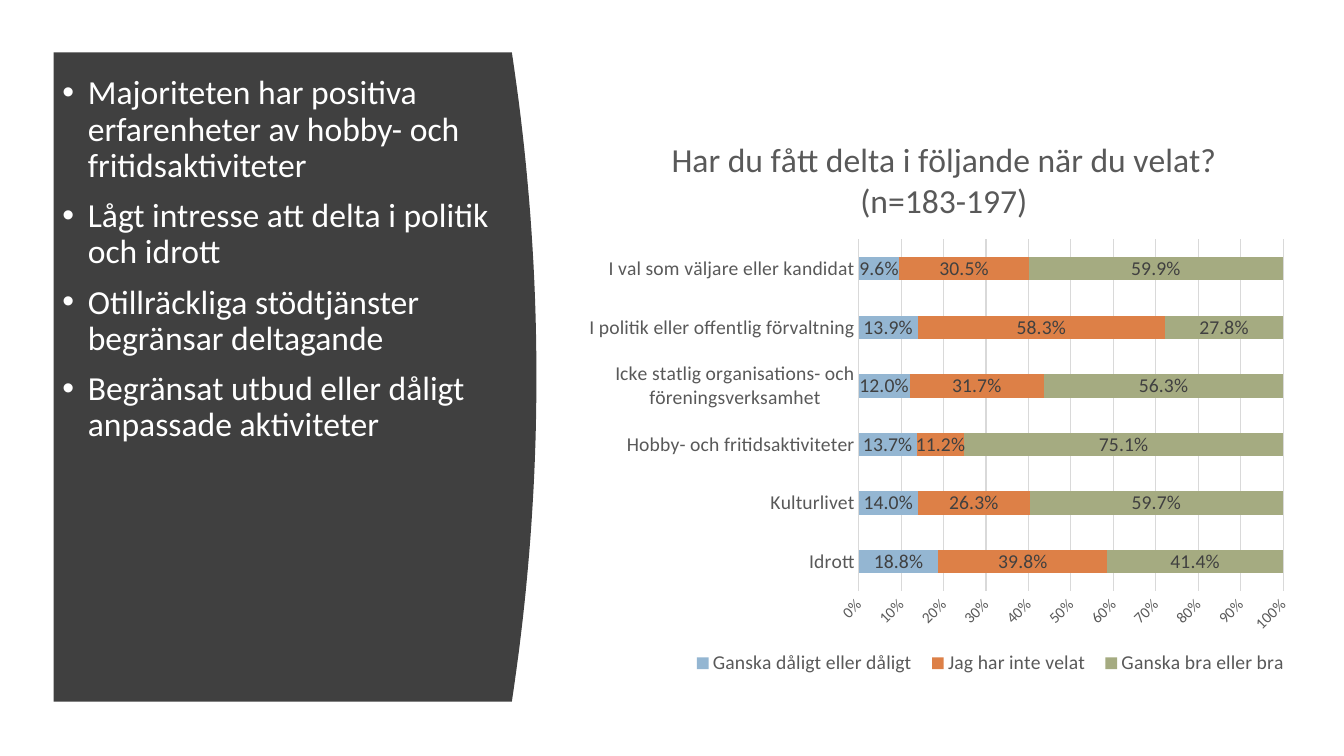
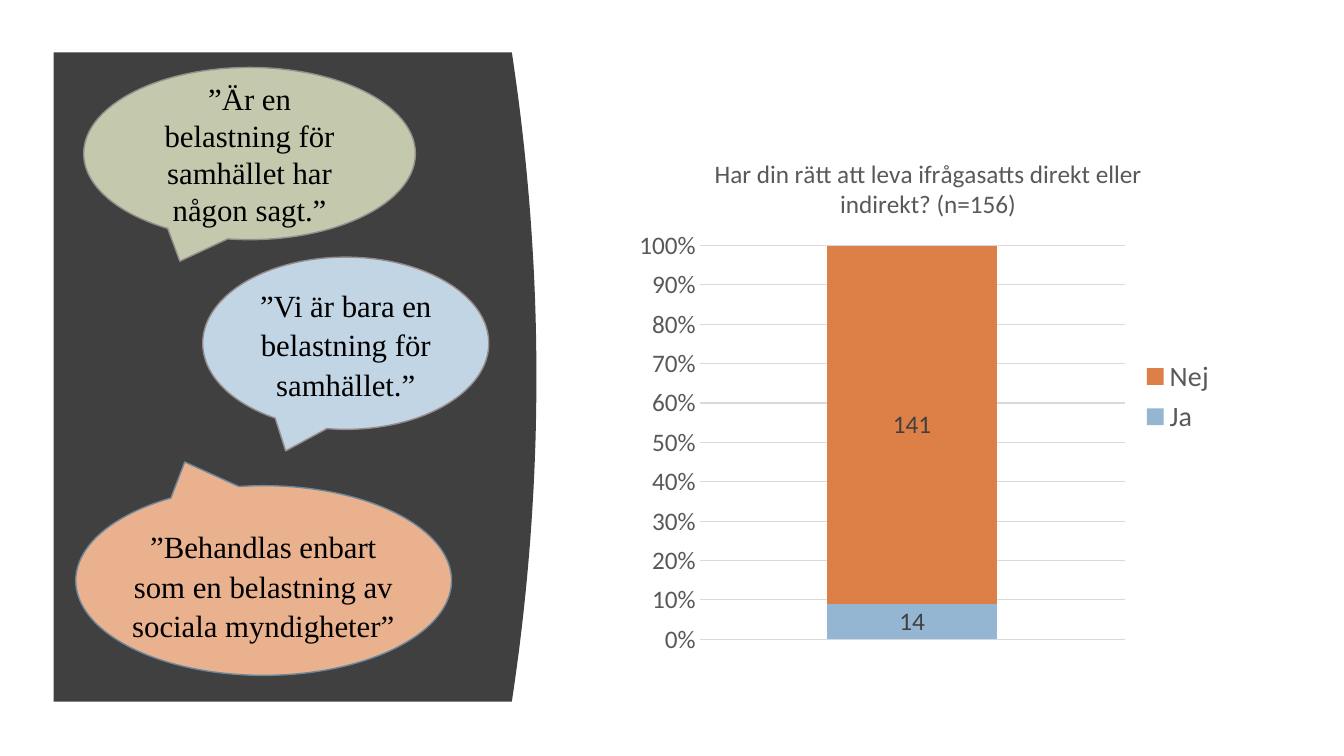
from pptx import Presentation
from pptx.chart.data import CategoryChartData
from pptx.dml.color import RGBColor
from pptx.enum.chart import XL_CHART_TYPE as Chart
from pptx.enum.chart import XL_LABEL_POSITION as LabelPos
from pptx.enum.chart import XL_LEGEND_POSITION as LegendPos
from pptx.enum.chart import XL_TICK_MARK as Tick
from pptx.enum.shapes import MSO_SHAPE as Shape
from pptx.enum.text import MSO_ANCHOR as Anchor
from pptx.enum.text import MSO_AUTO_SIZE as AutoSize
from pptx.enum.text import PP_ALIGN as Align
from pptx.oxml import parse_xml
from pptx.oxml.ns import nsdecls, qn
from pptx.util import Cm, Pt

SANS, SERIF = "Calibri", "Times New Roman"
WHITE, BLACK, DARK = "FFFFFF", "000000", "404040"
GREY, RULE = "595959", "D9D9D9"
BLUE, ORANGE, GREEN = "94B6D2", "DD8047", "A5AB81"
PANEL = dict(left=1.35, top=1.32, edge=12.9, bottom=17.68, bulge=0.62, steps=40)

BULLETS = [
    "Majoriteten har positiva erfarenheter av hobby- och fritidsaktiviteter",
    "Lågt intresse att delta i politik och idrott",
    "Otillräckliga stödtjänster begränsar deltagande",
    "Begränsat utbud eller dåligt anpassade aktiviteter",
]

PARTICIPATION = dict(
    kind=Chart.BAR_STACKED_100, box=(14.45, 2.69, 18.44, 14.53),
    title=["Har du fått delta i följande när du velat?", "(n=183-197)"],
    cats=["Idrott", "Kulturlivet", "Hobby- och fritidsaktiviteter",
          "Icke statlig organisations- och föreningsverksamhet",
          "I politik eller offentlig förvaltning",
          "I val som väljare eller kandidat"],
    series=[
        ("Ganska dåligt eller dåligt", BLUE,
         [0.188, 0.14, 0.137, 0.12, 0.139, 0.096]),
        ("Jag har inte velat", ORANGE,
         [0.398, 0.263, 0.112, 0.317, 0.583, 0.305]),
        ("Ganska bra eller bra", GREEN,
         [0.414, 0.597, 0.751, 0.563, 0.278, 0.599]),
    ],
    fmt="0.0%", legend=LegendPos.BOTTOM,
    title_size=24, label_size=14, axis_size=11, legend_size=14,
    title_at=(0.13, 0.05), plot_at=(0.39, 0.23, 0.58, 0.61),
    legend_at=(0.15, 0.94, 0.84, 0.05),
)

RIGHT_TO_LIVE = dict(
    kind=Chart.COLUMN_STACKED_100, box=(15.82, 3.2, 15.09, 13.59),
    title=["Har din rätt att leva ifrågasatts direkt eller",
           "indirekt? (n=156)"],
    cats=["1"],
    series=[("Ja", BLUE, [14]), ("Nej", ORANGE, [141])],
    fmt="General", legend=LegendPos.RIGHT,
    title_size=18, label_size=18, axis_size=18, legend_size=20,
    title_at=(0.14, 0.05), plot_at=(0.12, 0.22, 0.71, 0.73),
    legend_at=None,
)

TAIL_DOWN, TAIL_UP = 0.625, -0.625
CALLOUTS = [
    dict(box=(2.11, 1.7, 8.36, 4.34), fill="C4C8AC", line="968C8C",
         tail=TAIL_DOWN, text_box=None, spacing=1.0, after=0,
         text="”Är en belastning för samhället har någon sagt.”"),
    dict(box=(1.91, 12.24, 9.47, 4.78), fill="EAB18E", line="6D879B",
         tail=TAIL_UP, text_box=(2.9, 13.11, 7.47, 4.42), spacing=1.07, after=8,
         text="”Behandlas enbart som en belastning av sociala myndigheter”"),
    dict(box=(5.11, 6.48, 7.21, 4.34), fill="C1D5E5", line="968C8C",
         tail=TAIL_DOWN, text_box=None, spacing=1.07, after=8,
         text="”Vi är bara en belastning för samhället.”"),
]


def rgb(color):
    return RGBColor.from_string(color)


def cms(values):
    return [Cm(v) for v in values]


def paint(part, color):
    part.fill.solid()
    part.fill.fore_color.rgb = rgb(color)


def stroke(line, color, width=0.75):
    line.color.rgb = rgb(color)
    line.width = Pt(width)


def style(font, size, color, name=SANS):
    font.size, font.name, font.bold = Pt(size), name, False
    font.color.rgb = rgb(color)


def add_panel(slide):
    top, bottom, steps = PANEL["top"], PANEL["bottom"], PANEL["steps"]
    curve = []
    for i in range(steps + 1):
        t = i / steps
        x = PANEL["edge"] + PANEL["bulge"] * (1 - (2 * t - 1) ** 2)
        curve.append((Cm(x), Cm(top + t * (bottom - top))))
    fb = slide.shapes.build_freeform(Cm(PANEL["left"]), Cm(top))
    fb.add_line_segments(curve + [(Cm(PANEL["left"]), Cm(bottom))], close=True)
    sp = fb.convert_to_shape()
    sp.shadow.inherit = False
    paint(sp, DARK)
    sp.line.fill.background()


def place(element, index, at, inner=False):
    for old in element.findall(qn("c:layout")):
        element.remove(old)
    target = '<c:layoutTarget val="inner"/>' if inner else ""
    keys = ("x", "y", "w", "h")[:len(at)]
    modes = "".join(f'<c:{k}Mode val="edge"/>' for k in keys[:2])
    sizes = "".join(f'<c:{k} val="{v}"/>' for k, v in zip(keys, at))
    element.insert(index, parse_xml(
        f'<c:layout {nsdecls("c")}><c:manualLayout>{target}{modes}{sizes}'
        '</c:manualLayout></c:layout>'))


def add_title(chart, data):
    chart.has_title = True
    title = chart.chart_title
    title.include_in_layout = False
    tf = title.text_frame
    tf.text = "\n".join(data["title"])
    for p in tf.paragraphs:
        style(p.font, data["title_size"], GREY)
    place(title._element, 1, data["title_at"])


def add_legend(chart, data):
    chart.has_legend = True
    legend = chart.legend
    legend.position = data["legend"]
    legend.include_in_layout = False
    style(legend.font, data["legend_size"], GREY)
    if data["legend_at"]:
        place(legend._element, 1, data["legend_at"])


def format_axes(chart, data):
    values, cats = chart.value_axis, chart.category_axis
    for axis in (values, cats):
        axis.major_tick_mark = axis.minor_tick_mark = Tick.NONE
    values.minimum_scale, values.maximum_scale = 0, 1
    values.major_unit = 0.1
    values.has_major_gridlines = True
    stroke(values.major_gridlines.format.line, RULE)
    values.format.line.fill.background()
    values.tick_labels.number_format = "0%"
    values.tick_labels.number_format_is_linked = False
    style(values.tick_labels.font, data["axis_size"], GREY)
    if data["kind"] == Chart.BAR_STACKED_100:
        body = values._element.find(qn("c:txPr")).find(qn("a:bodyPr"))
        body.set("rot", "-2700000")
        body.set("vert", "horz")
        style(cats.tick_labels.font, data["label_size"], GREY)
        stroke(cats.format.line, RULE)
    else:
        cats.visible = False


def add_stacked_chart(slide, data):
    cd = CategoryChartData(number_format=data["fmt"])
    cd.categories = data["cats"]
    for name, _, vals in data["series"]:
        cd.add_series(name, vals)
    chart = slide.shapes.add_chart(data["kind"], *cms(data["box"]), cd).chart
    style(chart.font, data["axis_size"], BLACK)
    add_title(chart, data)
    add_legend(chart, data)
    format_axes(chart, data)
    plot = chart.plots[0]
    plot.gap_width, plot.overlap = 150, 100
    plot.vary_by_categories = False
    for series, (_, color, _) in zip(plot.series, data["series"]):
        paint(series.format, color)
        labels = series.data_labels
        labels.show_value = True
        labels.position = LabelPos.CENTER
        labels.number_format = data["fmt"]
        labels.number_format_is_linked = False
        style(labels.font, data["label_size"], DARK)
    place(chart._chartSpace.chart.plotArea, 0, data["plot_at"], inner=True)


def add_bullets(slide):
    slide.shapes._spTree.remove(slide.shapes.title._element)
    body = slide.placeholders[1]
    body.left, body.top, body.width, body.height = cms((1.32, 1.78, 12.67, 16.05))
    slide.shapes._spTree.append(body._element)
    tf = body.text_frame
    tf.text = "\n".join(BULLETS)
    tf.auto_size = AutoSize.NONE
    for p in tf.paragraphs:
        style(p.font, 24, WHITE)
        p.line_spacing, p.space_before = 0.9, Pt(10)
        pPr = p._p.get_or_add_pPr()
        pPr.set("marL", str(Cm(0.64)))
        pPr.set("indent", str(-Cm(0.64)))


def add_callout(slide, data):
    sp = slide.shapes.add_shape(Shape.OVAL_CALLOUT, *cms(data["box"]))
    sp.shadow.inherit = False
    sp.adjustments[0], sp.adjustments[1] = -0.21, data["tail"]
    paint(sp, data["fill"])
    stroke(sp.line, data["line"], 1)
    holder = sp
    if data["text_box"]:
        holder = slide.shapes.add_textbox(*cms(data["text_box"]))
    tf = holder.text_frame
    tf.word_wrap = True
    tf.vertical_anchor = Anchor.TOP if data["text_box"] else Anchor.MIDDLE
    p = tf.paragraphs[0]
    p.text = data["text"]
    p.alignment = Align.CENTER
    p.line_spacing, p.space_after = data["spacing"], Pt(data["after"])
    style(p.font, 22, BLACK, SERIF)


def main():
    prs = Presentation()
    prs.slide_width, prs.slide_height = Cm(33.87), Cm(19.05)
    content, blank = prs.slide_layouts[1], prs.slide_layouts[6]

    slide = prs.slides.add_slide(content)
    add_panel(slide)
    add_stacked_chart(slide, PARTICIPATION)
    add_bullets(slide)

    slide = prs.slides.add_slide(blank)
    add_panel(slide)
    add_stacked_chart(slide, RIGHT_TO_LIVE)
    for callout in CALLOUTS:
        add_callout(slide, callout)

    prs.save("out.pptx")


if __name__ == "__main__":
    main()
